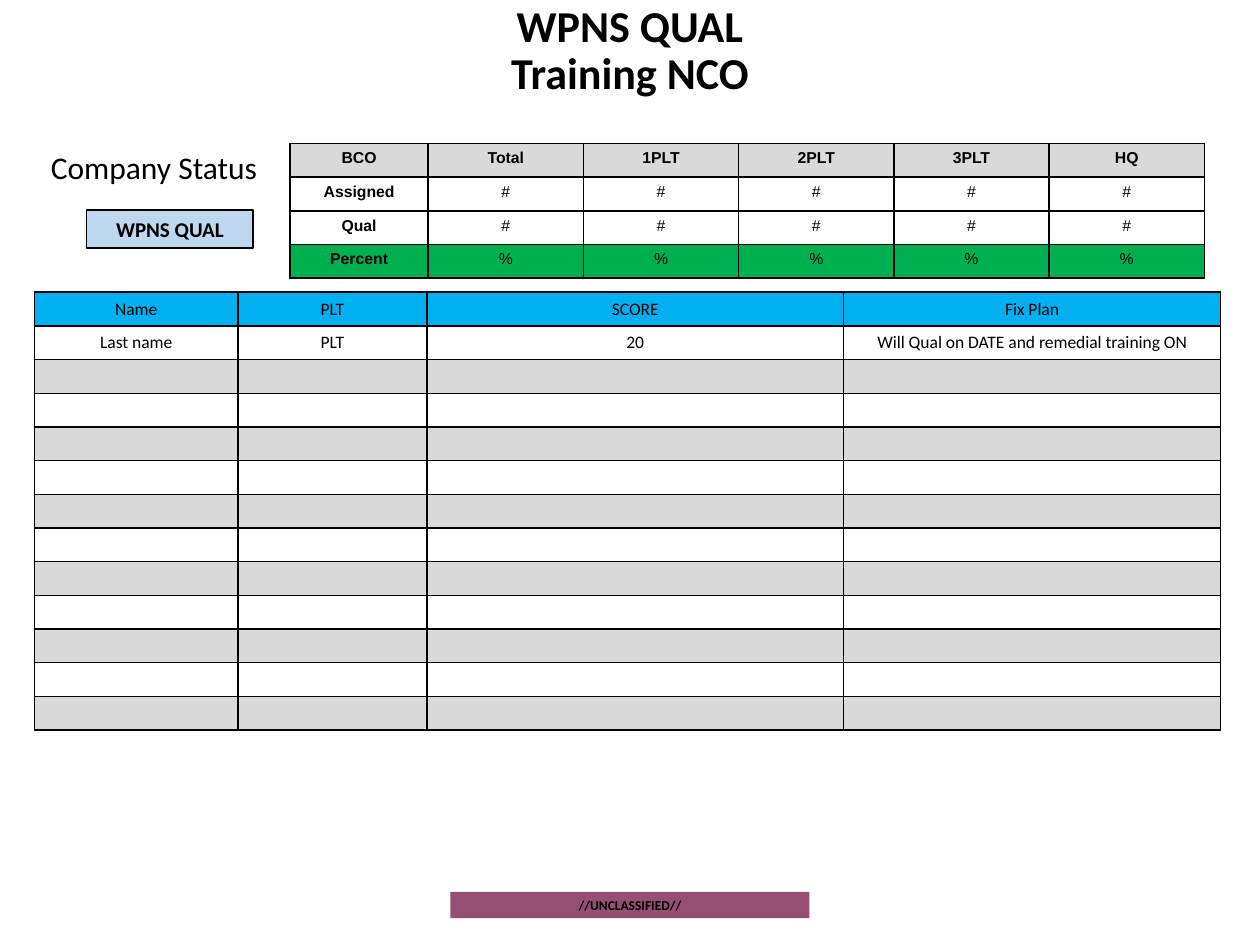
from dataclasses import dataclass

from lxml.etree import SubElement
from pptx import Presentation
from pptx.dml.color import RGBColor
from pptx.enum.shapes import MSO_SHAPE
from pptx.enum.text import MSO_ANCHOR, PP_ALIGN
from pptx.oxml.ns import qn
from pptx.util import Pt


@dataclass(frozen=True)
class Theme:
    body_font: str = "Calibri"
    status_font: str = "Arial"
    black: str = "000000"
    white: str = "FFFFFF"
    grey: str = "D9D9D9"
    green: str = "00B050"
    blue: str = "00B0F0"
    pale_blue: str = "BDD7EE"
    plum: str = "954F72"
    title_size: float = 25.2
    heading_size: float = 18
    label_size: float = 12
    roster_size: int = 10
    status_size: int = 9
    banner_size: float = 7.7
    rule: float = 1


class SlideBuilder:
    def __init__(self, slide, theme):
        self.slide = slide
        self.theme = theme

    def set_text(self, frame, text, size, bold=False, font=None, align=PP_ALIGN.CENTER):
        frame.text = text
        paragraph = frame.paragraphs[0]
        paragraph.alignment = align
        for run in paragraph.runs:
            run.font.name = font or self.theme.body_font
            run.font.size = Pt(size)
            run.font.bold = bold
            run.font.color.rgb = RGBColor.from_string(self.theme.black)
        return paragraph

    def text(self, box, text, size, **style):
        frame = self.slide.shapes.add_textbox(*map(Pt, box)).text_frame
        frame.word_wrap = True
        return frame, self.set_text(frame, text, size, **style)

    def label(self, box, text, size, fill, outlined=False):
        shape = self.slide.shapes.add_shape(MSO_SHAPE.RECTANGLE, *map(Pt, box))
        shape.shadow.inherit = False
        shape.fill.solid()
        shape.fill.fore_color.rgb = RGBColor.from_string(fill)
        if outlined:
            shape.line.color.rgb = RGBColor.from_string(self.theme.black)
            shape.line.width = Pt(self.theme.rule)
        else:
            shape.line.fill.background()
        frame = shape.text_frame
        frame.word_wrap = True
        frame.margin_top = frame.margin_bottom = Pt(2.9)
        self.set_text(frame, text, size, bold=True)

    def border(self, cell):
        properties = cell._tc.get_or_add_tcPr()
        for side in ("a:lnL", "a:lnR", "a:lnT", "a:lnB"):
            line = SubElement(properties, qn(side), w=str(Pt(self.theme.rule)))
            SubElement(SubElement(line, qn("a:solidFill")), qn("a:srgbClr"), val=self.theme.black)

    def table(self, left, top, widths, row_height, rows, fills, size, font,
              anchor, bold_headings=False):
        table = self.slide.shapes.add_table(
            len(rows), len(widths), Pt(left), Pt(top),
            Pt(sum(widths)), Pt(row_height * len(rows))).table
        table.first_row = table.horz_banding = False
        for column, width in zip(table.columns, widths):
            column.width = Pt(width)
        for r, (values, fill) in enumerate(zip(rows, fills)):
            table.rows[r].height = Pt(row_height)
            for c, value in enumerate(values):
                cell = table.cell(r, c)
                cell.vertical_anchor = anchor
                cell.margin_left = cell.margin_right = Pt(3.6)
                cell.margin_top = cell.margin_bottom = Pt(3.4)
                self.border(cell)
                cell.fill.solid()
                cell.fill.fore_color.rgb = RGBColor.from_string(fill)
                if value:
                    self.set_text(cell.text_frame, value, size, font=font,
                                  bold=bold_headings and (r == 0 or c == 0))
                else:
                    # Keeps an unfilled row as low as a filled one
                    SubElement(cell.text_frame.paragraphs[0]._p, qn("a:endParaRPr"),
                               sz=str(size * 100))


def main():
    theme = Theme()
    deck = Presentation()
    deck.slide_width, deck.slide_height = Pt(720), Pt(540)
    builder = SlideBuilder(deck.slides.add_slide(deck.slide_layouts[6]), theme)

    # Classification banner
    builder.label((257.4, 509.6, 205.2, 15), "//UNCLASSIFIED//", theme.banner_size, theme.plum)

    # Title
    title_frame, title = builder.text((49.7, 6.5, 620.6, 46), "WPNS QUAL\vTraining NCO",
                                      theme.title_size, bold=True)
    title_frame.vertical_anchor = MSO_ANCHOR.MIDDLE
    title.line_spacing = 0.9

    # Qualification label
    builder.label((49.5, 120, 95.3, 21.8), "WPNS QUAL", theme.label_size,
                  theme.pale_blue, outlined=True)

    # Company status by platoon
    units = ["Total", "1PLT", "2PLT", "3PLT", "HQ"]
    status_rows = [["BCO", *units]] + [
        [measure] + [mark] * len(units)
        for measure, mark in (("Assigned", "#"), ("Qual", "#"), ("Percent", "%"))]
    builder.table(165.7, 82, [79] + [88.7] * len(units), 19.25, status_rows,
                  [theme.grey, theme.white, theme.white, theme.green],
                  theme.status_size, theme.status_font, MSO_ANCHOR.TOP, bold_headings=True)

    # Roster of soldiers to requalify
    open_rows = 11
    roster_rows = [
        ["Name", "PLT", "SCORE", "Fix Plan"],
        ["Last name", "PLT", "20", "Will Qual on DATE and remedial training ON"],
    ] + [[""] * 4] * open_rows
    bands = [theme.white if i % 2 == 0 else theme.grey for i in range(open_rows + 1)]
    builder.table(19.7, 167, [116.3, 108, 238, 215.5], 19.25, roster_rows,
                  [theme.blue, *bands], theme.roster_size, theme.body_font, MSO_ANCHOR.MIDDLE)

    # Status heading
    builder.text((22, 80.8, 180, 29), "Company Status", theme.heading_size, align=PP_ALIGN.LEFT)

    deck.save("out.pptx")


if __name__ == "__main__":
    main()
